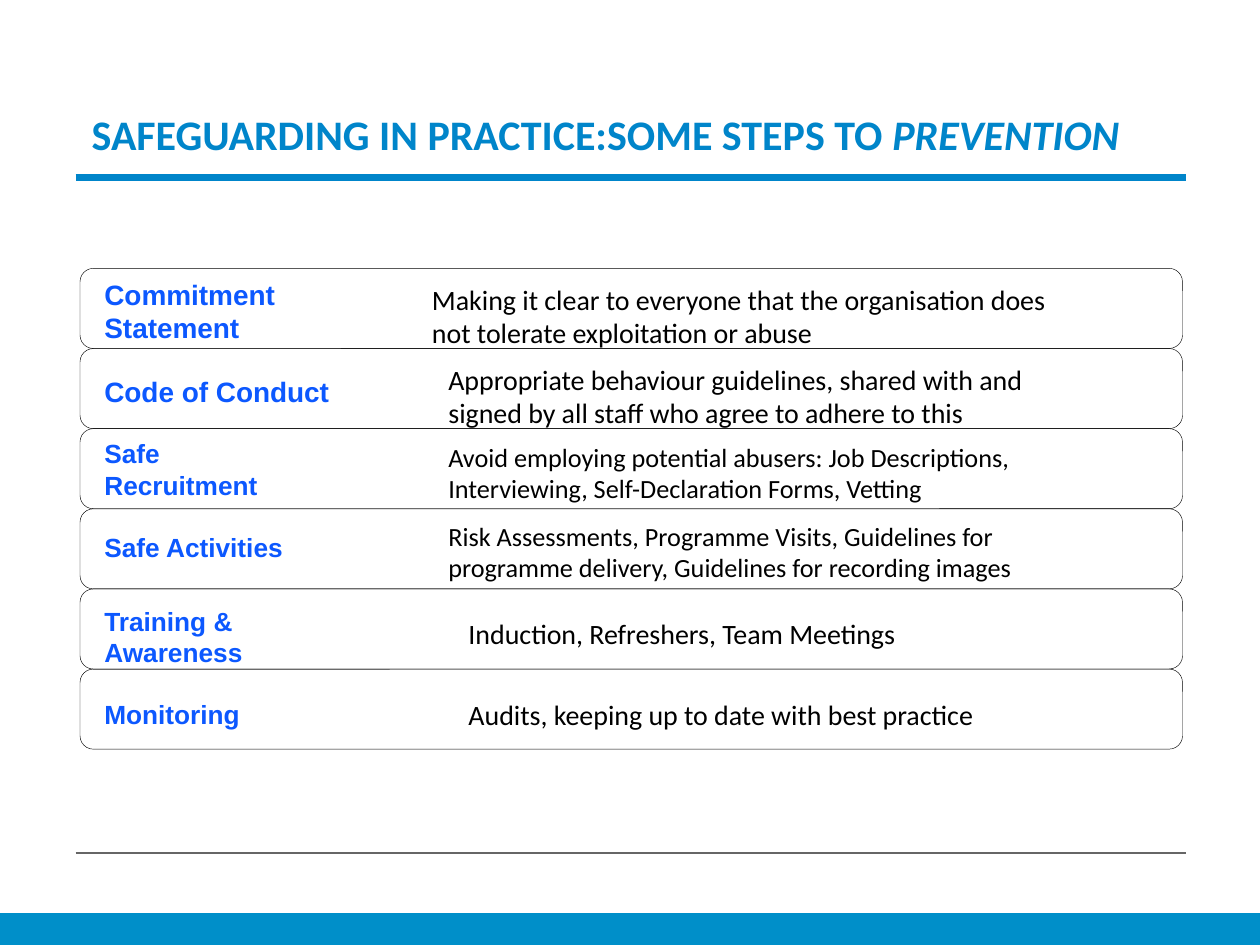
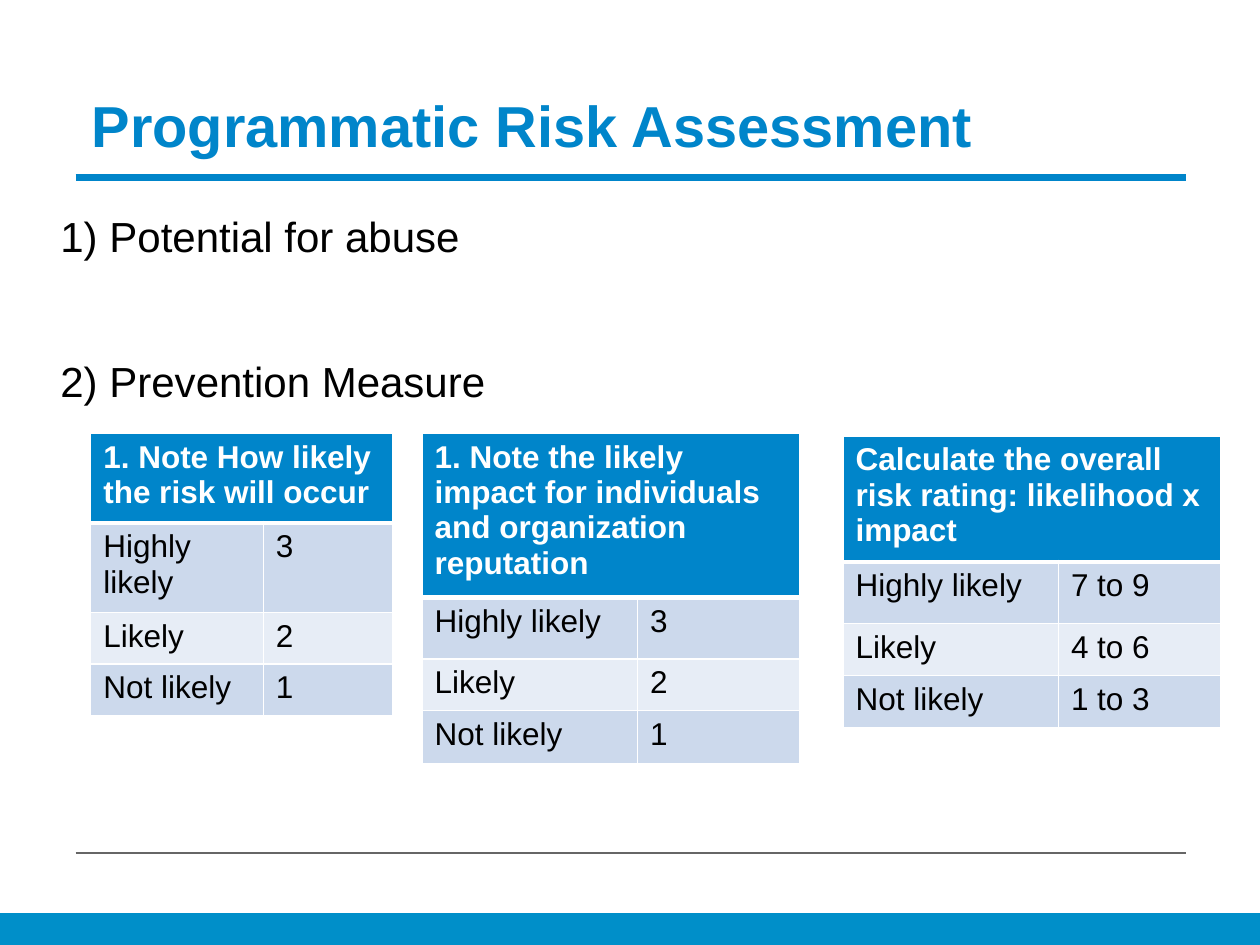
from dataclasses import dataclass

from lxml import etree
from pptx import Presentation
from pptx import util as u
from pptx.dml.color import RGBColor
from pptx.enum import shapes, text
from pptx.oxml.ns import qn

# The slide is a grid of square units
COLUMNS, ROWS = 100, 75
WIDTH, HEIGHT = u.Inches(10), u.Inches(7.5)

BLUE, BAND_BLUE, LABEL_BLUE = "0085CA", "008FC9", "0C58FF"
BLACK, WHITE, GREY = "000000", "FFFFFF", "666666"
STRIPES = ("CCD9EC", "E7EDF6")


@dataclass
class Style:
    size: float
    font: str
    color: str
    bold: bool = False


@dataclass
class Step:
    label: str
    detail: str
    label_drop: float
    label_width: float
    detail_column: float
    detail_drop: float
    detail_width: float
    label_size: float = 16
    detail_size: float = 16


@dataclass
class RatingTable:
    heading: str
    scores: tuple[str, ...]
    column: float
    row: float
    widths: tuple[float, ...]
    heights: tuple[float, ...]


CARD_COLUMN, CARD_ROW, CARD_WIDTH, CARD_HEIGHT = 6.35, 21.3, 87.5, 6.36
LABEL_COLUMN = 7.3
STEPS = [
    Step("Commitment Statement",
         "Making it clear to everyone that the organisation does not tolerate "
         "exploitation or abuse", 0.2, 25.1, 33.3, 0.6, 51.2),
    Step("Code of Conduct",
         "Appropriate behaviour guidelines, shared with and signed by all staff "
         "who agree to adhere to this", 1.6, 23.3, 34.6, 0.6, 49.1),
    Step("Safe Recruitment",
         "Avoid employing potential abusers: Job Descriptions, Interviewing, "
         "Self-Declaration Forms, Vetting", 0.2, 18.9, 34.6, 0.5, 53, 15, 15),
    Step("Safe Activities",
         "Risk Assessments, Programme Visits, Guidelines for programme delivery, "
         "Guidelines for recording images", 1.3, 18.9, 34.6, 0.4, 52.5, 15, 15),
    Step("Training & Awareness", "Induction, Refreshers, Team Meetings",
         0.8, 23.4, 36.2, 1.7, 42.6, 15),
    Step("Monitoring", "Audits, keeping up to date with best practice",
         1.8, 23.4, 36.2, 1.8, 42.6, 15),
]

LEVELS = ("Highly likely", "Likely", "Not likely")
RATING_TABLES = [
    RatingTable("1. Note How likely the risk will occur", ("3", "2", "1"),
                7.2, 34.4, (13.7, 10.3), (7.1, 7.1, 4.1, 4.1)),
    RatingTable("1. Note the likely impact for individuals and organization reputation",
                ("3", "2", "1"), 33.5, 34.4, (17.1, 12.9), (10.3, 4.9, 4.1, 4.2)),
    RatingTable("Calculate the overall risk rating: likelihood x impact",
                ("7 to 9", "4 to 6", "1 to 3"),
                66.9, 34.6, (17.1, 12.9), (7.5, 4.9, 4.1, 4.2)),
]


def across(columns: float) -> int:
    return round(WIDTH * columns / COLUMNS)


def down(rows: float) -> int:
    return round(HEIGHT * rows / ROWS)


def rgb(color: str) -> RGBColor:
    return RGBColor.from_string(color)


def format_runs(paragraph, style: Style) -> None:
    for run in paragraph.runs:
        run.font.size = u.Pt(style.size)
        run.font.name = style.font
        run.font.bold = style.bold
        run.font.color.rgb = rgb(style.color)


def add_text(slide, content: str, column: float, row: float, width: float,
             height: float, style: Style, margin: float = 1):
    """Add a wrapped text box; each line of content is a paragraph."""
    shape = slide.shapes.add_textbox(across(column), down(row), across(width), down(height))
    frame = shape.text_frame
    frame.word_wrap = True
    frame.margin_left = frame.margin_right = across(margin)
    frame.margin_top = frame.margin_bottom = down(margin / 2)
    frame.text = content
    for paragraph in frame.paragraphs:
        format_runs(paragraph, style)
    return frame


def add_rule(slide, row: float, color: str, weight: float) -> None:
    line = slide.shapes.add_connector(
        shapes.MSO_CONNECTOR.STRAIGHT, across(6), down(row), across(94.1), down(row))
    line.line.color.rgb = rgb(color)
    line.line.width = u.Pt(weight)
    etree.SubElement(line._element.spPr, qn("a:effectLst"))


def add_box(slide, kind, column: float, row: float, width: float, height: float,
            line_color: str, weight: float, fill: str | None = None) -> None:
    shape = slide.shapes.add_shape(
        kind, across(column), down(row), across(width), down(height))
    shape.shadow.inherit = False
    if fill:
        shape.fill.solid()
        shape.fill.fore_color.rgb = rgb(fill)
    else:
        shape.fill.background()
    shape.line.color.rgb = rgb(line_color)
    shape.line.width = u.Pt(weight)


def start_slide(presentation, title: str, style: Style, emphasis: str = ""):
    """Add a slide with the shared rules, footer band and title."""
    slide = presentation.slides.add_slide(presentation.slide_layouts[6])
    add_rule(slide, 14.1, BLUE, 4)
    add_rule(slide, 67.7, GREY, 0.75)
    add_box(slide, shapes.MSO_SHAPE.RECTANGLE, 0, 72.6, COLUMNS, 2.4,
            BAND_BLUE, 2, BAND_BLUE)
    frame = add_text(slide, title, 6.3, 7.3, 90.6, 6.5, style)
    frame.vertical_anchor = text.MSO_ANCHOR.MIDDLE
    paragraph = frame.paragraphs[0]
    paragraph.line_spacing = u.Pt(30)
    if emphasis:
        run = paragraph.add_run()
        run.text = emphasis
        run.font.italic = True
        format_runs(paragraph, style)
    return slide


def style_cell(cell, content: str, fill: str, style: Style, bottom: float = 1) -> None:
    cell.text = content
    format_runs(cell.text_frame.paragraphs[0], style)
    properties = cell._tc.get_or_add_tcPr()
    for side, weight in (("L", 1), ("R", 1), ("T", 1), ("B", bottom)):
        border = etree.SubElement(properties, qn(f"a:ln{side}"), w=str(u.Pt(weight)))
        paint = etree.SubElement(border, qn("a:solidFill"))
        etree.SubElement(paint, qn("a:srgbClr"), val=WHITE)
    cell.fill.solid()
    cell.fill.fore_color.rgb = rgb(fill)


def add_rating_table(slide, rating: RatingTable) -> None:
    table = slide.shapes.add_table(
        len(rating.heights), len(rating.widths), across(rating.column), down(rating.row),
        across(sum(rating.widths)), down(sum(rating.heights))).table
    for column, width in zip(table.columns, rating.widths):
        column.width = across(width)
    for row, height in zip(table.rows, rating.heights):
        row.height = down(height)

    heading = table.cell(0, 0)
    heading.merge(table.cell(0, 1))
    style_cell(heading, rating.heading, BLUE, Style(18, "Arial", WHITE, True), bottom=3)
    for index, values in enumerate(zip(LEVELS, rating.scores)):
        for position, value in enumerate(values):
            style_cell(table.cell(index + 1, position), value,
                       STRIPES[index % 2], Style(18, "Arial", BLACK))


def build_prevention_slide(presentation) -> None:
    slide = start_slide(presentation, "SAFEGUARDING IN PRACTICE:SOME STEPS TO ",
                        Style(24, "Calibri", BLUE, True), "PREVENTION")
    for index, step in enumerate(STEPS):
        top = CARD_ROW + index * CARD_HEIGHT
        add_box(slide, shapes.MSO_SHAPE.ROUNDED_RECTANGLE, CARD_COLUMN, top,
                CARD_WIDTH, CARD_HEIGHT, BLACK, 0.25)
        add_text(slide, step.label, LABEL_COLUMN, top + step.label_drop, step.label_width,
                 CARD_HEIGHT, Style(step.label_size, "Arial", LABEL_BLUE, True))
        add_text(slide, step.detail, step.detail_column, top + step.detail_drop,
                 step.detail_width, CARD_HEIGHT, Style(step.detail_size, "Calibri", BLACK))


def build_risk_slide(presentation) -> None:
    slide = start_slide(presentation, "Programmatic Risk Assessment",
                        Style(33, "Arial", BLUE, True))
    body = add_text(slide, "1) Potential for abuse\n2) Prevention Measure",
                    4.8, 16.7, 90.6, 16, Style(24, "Arial", BLACK), margin=0)
    body.paragraphs[1].space_before = u.Pt(54)
    for rating in RATING_TABLES:
        add_rating_table(slide, rating)


def main() -> None:
    presentation = Presentation()
    presentation.slide_width, presentation.slide_height = WIDTH, HEIGHT
    build_prevention_slide(presentation)
    build_risk_slide(presentation)
    presentation.save("out.pptx")


if __name__ == "__main__":
    main()
